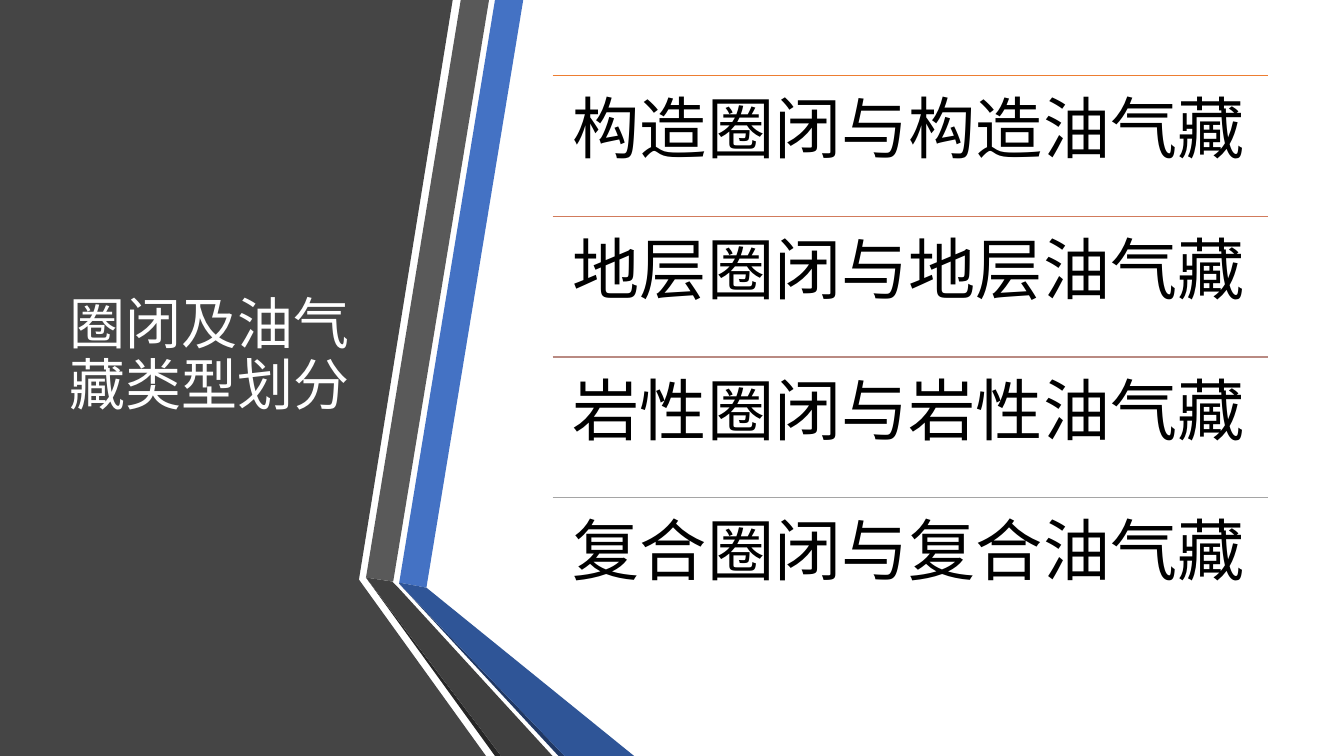
from lxml import etree
from pptx import Presentation
from pptx import util as u
from pptx.dml.color import RGBColor
from pptx.enum import shapes, text
from pptx.oxml.ns import qn

FONT = "Noto Sans CJK SC"
WHITE = RGBColor(0xFF, 0xFF, 0xFF)
BLACK = RGBColor(0x00, 0x00, 0x00)
PANEL_GREY = RGBColor(0x45, 0x45, 0x45)
BAND_GREY = RGBColor(0x59, 0x59, 0x59)
FOLD_GREY = RGBColor(0x40, 0x40, 0x40)
EDGE_GREY = RGBColor(0x26, 0x26, 0x26)
BAND_BLUE = RGBColor(0x44, 0x72, 0xC4)
FOLD_BLUE = RGBColor(0x2F, 0x55, 0x97)
EDGE_BLUE = RGBColor(0x20, 0x38, 0x64)

SLIDE_WIDTH, SLIDE_HEIGHT = 13.33, 7.5

# Outlines in inches from the top left of the panel, back to front
PANEL_OUTLINES = [
    (PANEL_GREY, [(0, 0), (3.53, 0), (4.49, 0), (3.56, 5.75), (4.82, 7.5), (0, 7.5)]),
    (BAND_BLUE, [(3.96, 5.78), (4.23, 5.83), (5.19, 0), (4.91, 0)]),
    (BAND_GREY, [(4.85, 0), (4.57, 0), (3.63, 5.73), (3.9, 5.77)]),
    (EDGE_GREY, [(3.63, 5.73), (4.91, 7.5), (4.97, 7.5)]),
    (EDGE_BLUE, [(3.96, 5.79), (5.54, 7.5), (5.6, 7.5)]),
    (FOLD_BLUE, [(3.96, 5.79), (5.6, 7.5), (6.29, 7.5), (4.23, 5.83), (3.96, 5.78)]),
    (FOLD_GREY, [(5.48, 7.5), (3.95, 5.83), (3.89, 5.77), (3.63, 5.73), (4.97, 7.5)]),
]

TRAP_TYPES = [
    ("构造圈闭与构造油气藏", RGBColor(0xED, 0x7D, 0x31)),
    ("地层圈闭与地层油气藏", RGBColor(0xD1, 0x7B, 0x5C)),
    ("岩性圈闭与岩性油气藏", RGBColor(0xB9, 0x8A, 0x82)),
    ("复合圈闭与复合油气藏", RGBColor(0xA5, 0xA5, 0xA5)),
]


def write_text(shape, content, size, color, anchor, margins):
    """Fill a shape with one left-aligned paragraph."""
    frame = shape.text_frame
    frame.word_wrap = True
    frame.auto_size = text.MSO_AUTO_SIZE.NONE
    frame.vertical_anchor = anchor
    frame.margin_left = frame.margin_right = u.Inches(margins[0])
    frame.margin_top = frame.margin_bottom = u.Inches(margins[1])
    paragraph = frame.paragraphs[0]
    paragraph.alignment = text.PP_ALIGN.LEFT
    paragraph.line_spacing = 0.9
    run = paragraph.add_run()
    run.text = content
    run.font.size = u.Pt(size)
    run.font.color.rgb = color
    run.font.name = FONT
    # Chinese glyphs take the East Asian typeface
    etree.SubElement(run.font._element, qn("a:ea"), typeface=FONT)


def add_folded_panel(slide, left, top):
    """Draw the dark panel and its folded bands; return the front piece."""
    for color, outline in PANEL_OUTLINES:
        points = [(u.Inches(left + x), u.Inches(top + y)) for x, y in outline]
        builder = slide.shapes.build_freeform(*points[0])
        builder.add_line_segments(points[1:], close=True)
        piece = builder.convert_to_shape()
        piece.shadow.inherit = False
        piece.fill.solid()
        piece.fill.fore_color.rgb = color
        piece.line.fill.background()
    return piece


def place_title(slide, front_piece, left, top, width, height):
    title = slide.shapes.title
    title.left, title.top = u.Inches(left), u.Inches(top)
    title.width, title.height = u.Inches(width), u.Inches(height)
    write_text(title, "圈闭及油气藏类型划分", size=40, color=WHITE,
               anchor=text.MSO_ANCHOR.MIDDLE, margins=(0.1, 0.05))
    # Bring the title in front of the panel
    front_piece.element.addnext(title.element)


def add_trap_list(slide, left, top, width, height):
    """Stack equal rows, each a rule with its text below."""
    row_height = height / len(TRAP_TYPES)
    for index, (label, color) in enumerate(TRAP_TYPES):
        row_top = u.Inches(top + index * row_height)
        rule = slide.shapes.add_connector(
            shapes.MSO_CONNECTOR.STRAIGHT,
            u.Inches(left), row_top, u.Inches(left + width), row_top)
        rule.line.color.rgb = color
        rule.line.width = u.Pt(1)
        etree.SubElement(rule.element.spPr, qn("a:effectLst"))
        box = slide.shapes.add_textbox(
            u.Inches(left), row_top, u.Inches(width), u.Inches(row_height))
        write_text(box, label, size=48, color=BLACK,
                   anchor=text.MSO_ANCHOR.TOP, margins=(0.2, 0.2))


def main():
    presentation = Presentation()
    presentation.slide_width = u.Inches(SLIDE_WIDTH)
    presentation.slide_height = u.Inches(SLIDE_HEIGHT)
    slide = presentation.slides.add_slide(presentation.slide_layouts[5])
    front_piece = add_folded_panel(slide, 0, 0)
    place_title(slide, front_piece, 0.59, 0.75, 3.04, 5.58)
    add_trap_list(slide, 5.48, 0.75, 7.1, 5.58)
    presentation.save("out.pptx")


if __name__ == "__main__":
    main()
